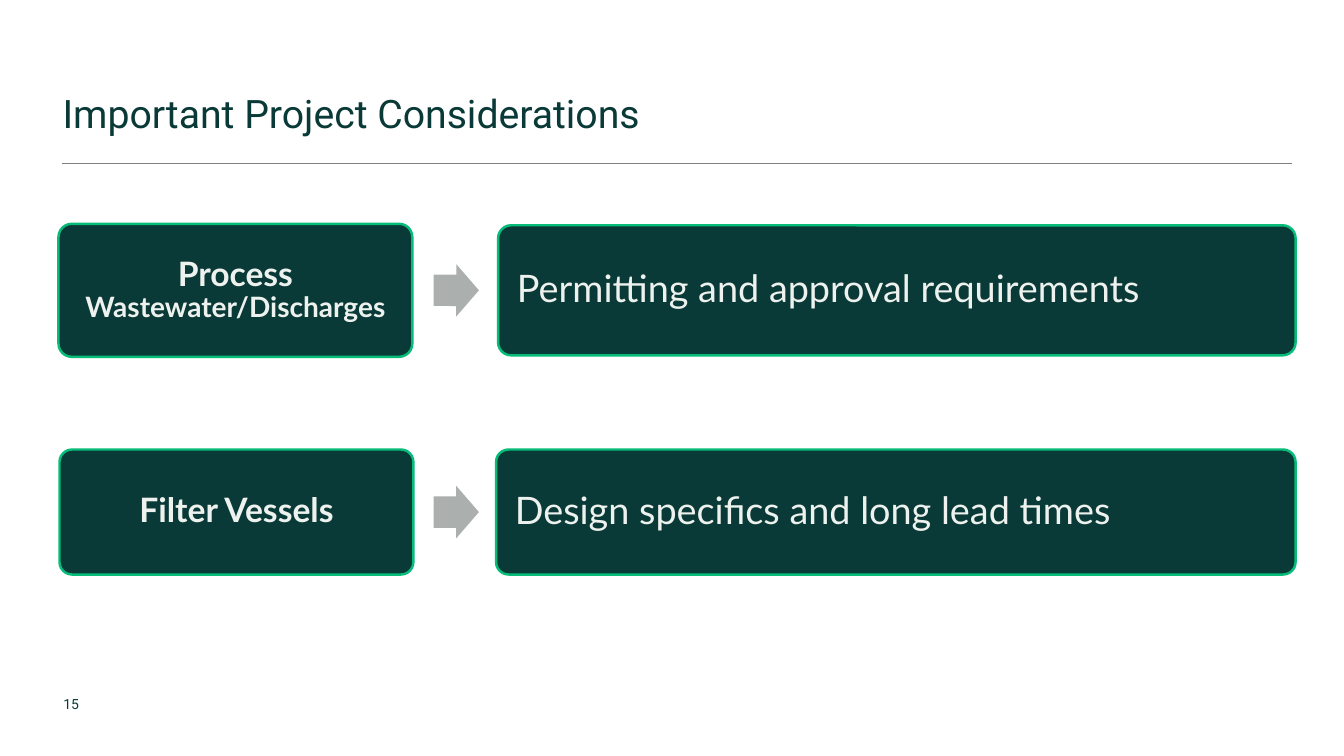
from pptx import Presentation
from pptx.dml.color import RGBColor
from pptx.enum.shapes import MSO_CONNECTOR, MSO_SHAPE as Kind
from pptx.enum.text import MSO_ANCHOR as Anchor, PP_ALIGN as Align
from pptx.oxml.ns import qn
from pptx.util import Inches, Pt
from lxml.etree import SubElement

# Content: each row has label runs (text, size), a detail, and its geometry
TITLE = "Important Project Considerations"
PAGE = "15"
ROWS = [
    {"label": [("Process ", 24), ("Wastewater/Discharges", 20)],
     "detail": [("Permitting and approval requirements", 27)],
     "mid": 2.88, "tall": (1.32, 1.29), "left": (0.58, 4.94), "tilt": 0.1},
    {"label": [("Filter Vessels", 24)],
     "detail": [("Design specifics and long lead times", 27)],
     "mid": 5.08, "tall": (1.24, 1.24), "left": (0.59, 4.92), "tilt": 0},
]
DARK, GREEN, PALE, GREY, RULE = "0A3A37", "07BB78", "EEF2EE", "ABAFAE", "808080"
WIDE, HIGH = 13.33, 7.5
EDGE, SPAN = 0.62, 12.19
LABEL_W, RIGHT = 3.51, 12.85
ARROW = (4.3, 0.45, 0.52)


def color(code):
    return RGBColor.from_string(code)


def pad(frame, left, top, right, bottom):
    frame.margin_left, frame.margin_top = Inches(left), Inches(top)
    frame.margin_right, frame.margin_bottom = Inches(right), Inches(bottom)
    frame.word_wrap = True


def style(font, name, size, code, bold=False):
    font.name, font.size, font.bold = name, Pt(size), bold
    font.color.rgb = color(code)


def block(kind, left, mid, width, height, fill):
    item = slide.shapes.add_shape(kind, Inches(left), Inches(mid - height / 2),
                                  Inches(width), Inches(height))
    item.shadow.inherit = False
    item.fill.solid()
    item.fill.fore_color.rgb = color(fill)
    item.line.fill.background()
    return item


def card(left, mid, width, height, runs, align, inset, bold):
    item = block(Kind.ROUNDED_RECTANGLE, left, mid, width, height, DARK)
    item.adjustments[0] = 0.1
    item.line.color.rgb = color(GREEN)
    item.line.width = Pt(1.75)
    frame = item.text_frame
    pad(frame, *[inset] * 4)
    frame.vertical_anchor = Anchor.MIDDLE
    para = frame.paragraphs[0]
    para.alignment, para.line_spacing = align, 0.9
    for text, size in runs:
        run = para.add_run()
        run.text = text
        style(run.font, "Lato", size, PALE, bold)


deck = Presentation()
deck.slide_width, deck.slide_height = Inches(WIDE), Inches(HIGH)
slide = deck.slides.add_slide(deck.slide_layouts[5])

# Title and rule
title = slide.shapes.title
title.left, title.top = Inches(EDGE), Inches(0.53)
title.width, title.height = Inches(SPAN), Inches(0.87)
frame = title.text_frame
frame.text = TITLE
pad(frame, 0, 0.05, 0.1, 0.05)
frame.vertical_anchor = Anchor.BOTTOM
para = frame.paragraphs[0]
para.alignment, para.line_spacing = Align.LEFT, Pt(30)
style(para.font, "Roboto", 28, DARK)

rule = slide.shapes.add_connector(MSO_CONNECTOR.STRAIGHT, Inches(EDGE), Inches(1.62),
                                  Inches(EDGE + SPAN), Inches(1.62))
rule.line.color.rgb = color(RULE)
rule.line.width = Pt(0.75)
SubElement(rule._element.spPr, qn("a:effectLst"))

# Rows: label, arrow, detail
for row in ROWS:
    mid, (first, last) = row["mid"], row["left"]
    card(first, mid, LABEL_W, row["tall"][0], row["label"], Align.CENTER, 0.14, True)
    left, width, height = ARROW
    arrow = block(Kind.RIGHT_ARROW, left, mid, width, height, GREY)
    arrow.adjustments[0], arrow.adjustments[1] = 0.6, 0.5
    arrow.rotation = row["tilt"]
    card(last, mid, RIGHT - last, row["tall"][1], row["detail"], Align.LEFT, 0.15, False)

# Page number
page = slide.shapes.add_textbox(Inches(0.53), Inches(6.85), Inches(0.52), Inches(0.27))
page.text_frame.text = PAGE
page.text_frame.word_wrap = True
style(page.text_frame.paragraphs[0].font, "Roboto", 10, DARK)

deck.save("out.pptx")
